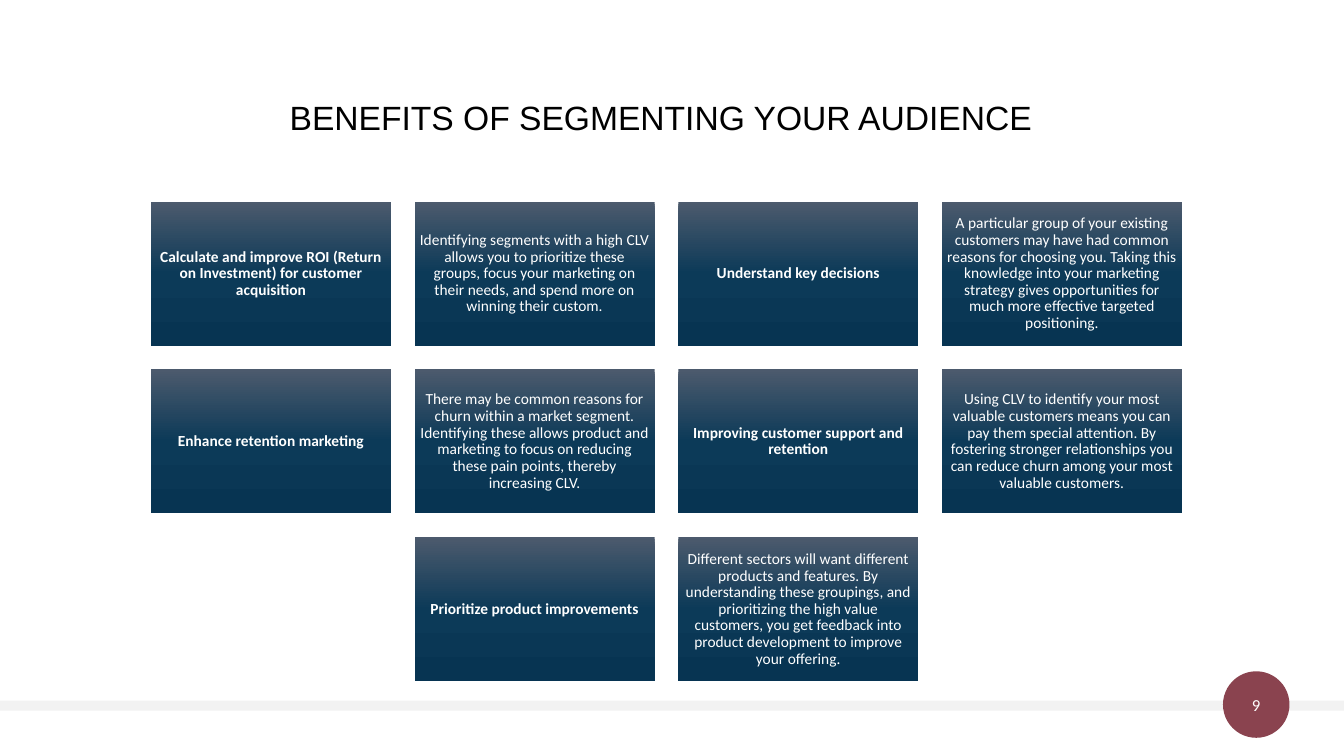
from copy import deepcopy

from pptx import Presentation
from pptx.dml.color import RGBColor
from pptx.enum.shapes import MSO_SHAPE
from pptx.enum.text import MSO_ANCHOR, PP_ALIGN
from pptx.oxml.ns import qn
from pptx.util import Inches, Pt

RECTANGLE, OVAL = MSO_SHAPE.RECTANGLE, MSO_SHAPE.OVAL
TOP, MIDDLE = MSO_ANCHOR.TOP, MSO_ANCHOR.MIDDLE
CENTER = PP_ALIGN.CENTER

PAGE_WIDTH, PAGE_HEIGHT = 13.33, 7.5
TITLE_ONLY = 5
COLORS = {
    "band": "F2F2F2",
    "badge": "8A434F",
    "card top": "4C5A6D",
    "card middle": "0C3A58",
    "card bottom": "073452",
    "title": "000000",
    "light": "FFFFFF",
}
CARD_GRADIENT = [(0, "card top"), (0.5, "card middle"), (1, "card bottom")]

COLUMNS = 4
CARD_WIDTH, CARD_HEIGHT, GAP = 2.38, 1.43, 0.235
GRID_CENTER, GRID_TOP = 6.61, 2

BENEFITS = [
    ("Calculate and improve ROI (Return on Investment) for customer acquisition",
     "Identifying segments with a high CLV allows you to prioritize these groups, "
     "focus your marketing on their needs, and spend more on winning their custom."),
    ("Understand key decisions",
     "A particular group of your existing customers may have had common reasons for "
     "choosing you. Taking this knowledge into your marketing strategy gives "
     "opportunities for much more effective targeted positioning."),
    ("Enhance retention marketing",
     "There may be common reasons for churn within a market segment. Identifying "
     "these allows product and marketing to focus on reducing these pain points, "
     "thereby increasing CLV."),
    ("Improving customer support and retention",
     "Using CLV to identify your most valuable customers means you can pay them "
     "special attention. By fostering stronger relationships you can reduce churn "
     "among your most valuable customers."),
    ("Prioritize product improvements",
     "Different sectors will want different products and features. By understanding "
     "these groupings, and prioritizing the high value customers, you get feedback "
     "into product development to improve your offering."),
]


def rgb(name):
    return RGBColor.from_string(COLORS[name])


def write(box, text, size=11, font="Calibri", color="light", bold=False,
          anchor=MIDDLE, insets=(0.05, 0.05, 0.05, 0.05), spacing=0.9):
    """Fill a box with one centred paragraph; insets are left, top, right, bottom."""
    frame = box.text_frame
    frame.word_wrap = True
    frame.vertical_anchor = anchor
    (frame.margin_left, frame.margin_top,
     frame.margin_right, frame.margin_bottom) = map(Inches, insets)
    para = frame.paragraphs[0]
    para.alignment = CENTER
    para.line_spacing = spacing
    span = para.add_run()
    span.text = text
    span.font.size = Pt(size)
    span.font.name = font
    span.font.bold = bold
    span.font.color.rgb = rgb(color)


def add_box(page, kind, left, top, width, height):
    box = page.shapes.add_shape(kind, *map(Inches, (left, top, width, height)))
    box.shadow.inherit = False
    box.line.fill.background()
    return box


def fill_solid(box, color):
    box.fill.solid()
    box.fill.fore_color.rgb = rgb(color)


def fill_downward(box, gradient):
    """Shade a box from top to bottom through (position, colour name) stops."""
    box.fill.gradient()
    box.fill.gradient_angle = 270
    stop_list = box._element.spPr.find(qn("a:gradFill")).find(qn("a:gsLst"))
    while len(stop_list) < len(gradient):
        stop_list.append(deepcopy(stop_list[0]))
    for stop, (position, color) in zip(box.fill.gradient_stops, gradient):
        stop.position = position
        stop.color.rgb = rgb(color)


def add_footer(page, number):
    band = add_box(page, RECTANGLE, 0, 6.95, PAGE_WIDTH, 0.1)
    fill_solid(band, "band")
    badge = add_box(page, OVAL, 12.13, 6.66, 0.66, 0.66)
    fill_solid(badge, "badge")
    write(badge, number, size=12, insets=(0, 0, 0, 0), spacing=1)


def add_title(page, text):
    title = page.shapes.title
    title.left, title.top = Inches(0.69), Inches(0.61)
    title.width, title.height = Inches(11.83), Inches(0.91)
    write(title, text, size=24, font="Arial", color="title", anchor=TOP,
          insets=(0, 0.4, 0.1, 0.05))


def add_cards(page, benefits):
    """Lay headings and details out in rows, each row centred on the grid."""
    cards = [(text, text is heading)
             for heading, detail in benefits for text in (heading, detail)]
    for index, (text, bold) in enumerate(cards):
        row, column = divmod(index, COLUMNS)
        count = min(COLUMNS, len(cards) - row * COLUMNS)
        row_width = count * CARD_WIDTH + (count - 1) * GAP
        left = GRID_CENTER - row_width / 2 + column * (CARD_WIDTH + GAP)
        top = GRID_TOP + row * (CARD_HEIGHT + GAP)
        card = add_box(page, RECTANGLE, left, top, CARD_WIDTH, CARD_HEIGHT)
        fill_downward(card, CARD_GRADIENT)
        write(card, text, bold=bold)


def main():
    deck = Presentation()
    deck.slide_width, deck.slide_height = Inches(PAGE_WIDTH), Inches(PAGE_HEIGHT)
    page = deck.slides.add_slide(deck.slide_layouts[TITLE_ONLY])
    add_footer(page, "9")
    add_title(page, "BENEFITS OF SEGMENTING YOUR AUDIENCE")
    add_cards(page, BENEFITS)
    deck.save("out.pptx")


if __name__ == "__main__":
    main()
